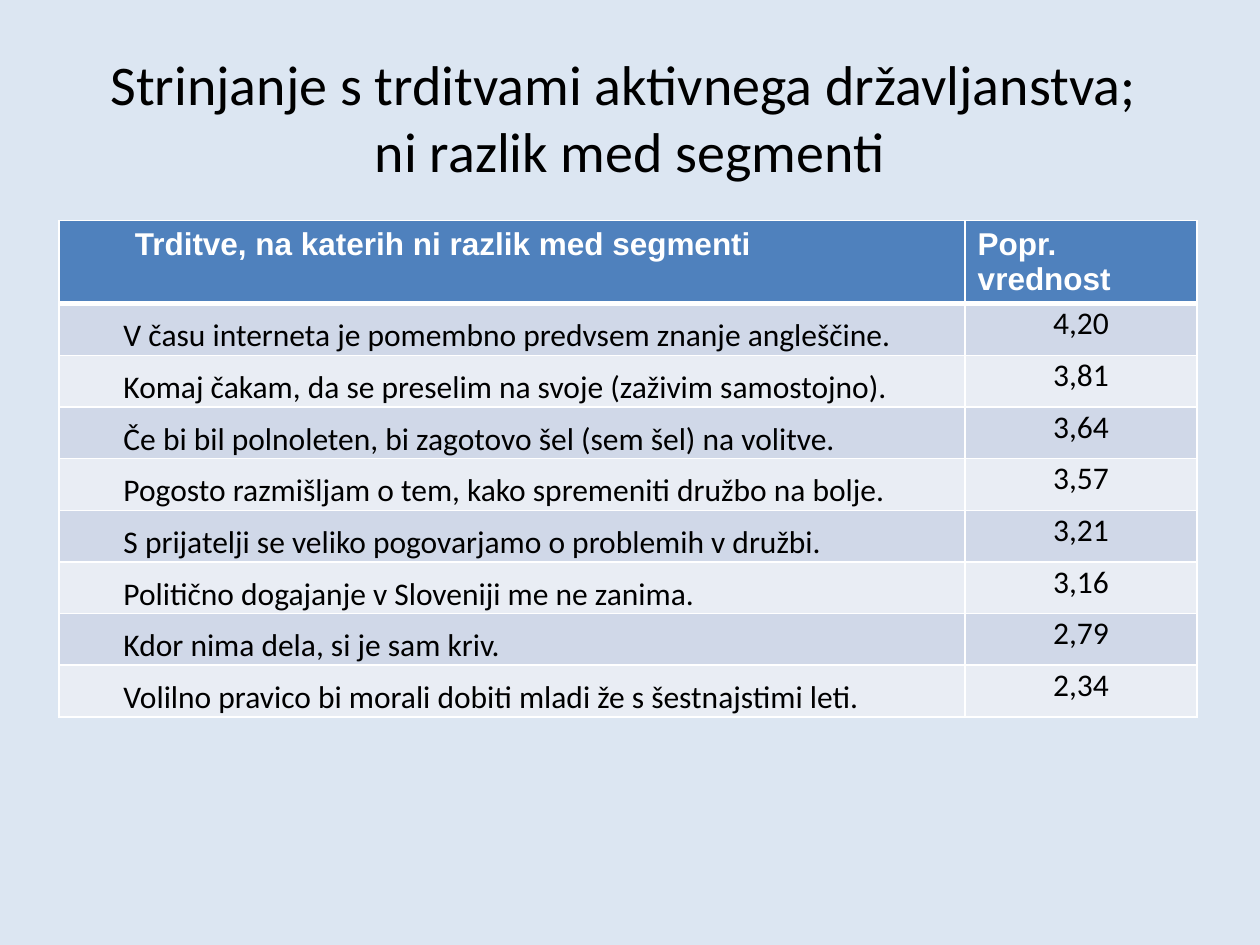
import lxml.etree
import pptx
import pptx.dml.color
import pptx.enum.text
import pptx.oxml.ns
import pptx.util

Inches = pptx.util.Inches
Pt = pptx.util.Pt
ALIGN = pptx.enum.text.PP_ALIGN
ANCHOR = pptx.enum.text.MSO_ANCHOR

COLORS = {
    "background": "DCE6F2",
    "text": "000000",
    "white": "FFFFFF",
    "header": "4F81BD",
    "odd": "D0D8E8",
    "even": "E9EDF4",
}

TITLE = "Strinjanje s trditvami aktivnega državljanstva; \vni razlik med segmenti"
HEADERS = ("Trditve, na katerih ni razlik med segmenti", "Popr. vrednost")
STATEMENTS = [
    ("V času interneta je pomembno predvsem znanje angleščine.", "4,20"),
    ("Komaj čakam, da se preselim na svoje (zaživim samostojno).", "3,81"),
    ("Če bi bil polnoleten, bi zagotovo šel (sem šel) na volitve.", "3,64"),
    ("Pogosto razmišljam o tem, kako spremeniti družbo na bolje.", "3,57"),
    ("S prijatelji se veliko pogovarjamo o problemih v družbi.", "3,21"),
    ("Politično dogajanje v Sloveniji me ne zanima.", "3,16"),
    ("Kdor nima dela, si je sam kriv.", "2,79"),
    ("Volilno pravico bi morali dobiti mladi že s šestnajstimi leti.", "2,34"),
]


def rgb(name):
    return pptx.dml.color.RGBColor.from_string(COLORS[name])


class SlideBuilder:
    """Holds the style and the current slide."""

    def __init__(self, deck):
        self.page = deck.slides.add_slide(deck.slide_layouts[5])
        fill = self.page.background.fill
        fill.solid()
        fill.fore_color.rgb = rgb("background")

    def format_runs(self, para, size, color, font="Calibri", bold=False):
        for span in para.runs:
            span.font.name = font
            span.font.size = Pt(size)
            span.font.bold = bold
            span.font.color.rgb = rgb(color)

    def title(self, text, left, top, width, height):
        box = self.page.shapes.title
        box.left, box.top = Inches(left), Inches(top)
        box.width, box.height = Inches(width), Inches(height)
        frame = box.text_frame
        frame.text = text
        frame.vertical_anchor = ANCHOR.MIDDLE
        para = frame.paragraphs[0]
        para.alignment = ALIGN.CENTER
        self.format_runs(para, 32, "text")

    def borders(self, cell, bottom):
        """Draw white cell borders, 1 pt except for the bottom one."""
        properties = cell._tc.get_or_add_tcPr()
        qn = pptx.oxml.ns.qn
        for side, width in (("L", 1), ("R", 1), ("T", 1), ("B", bottom)):
            line = lxml.etree.SubElement(properties, qn(f"a:ln{side}"), w=str(Pt(width)))
            solid = lxml.etree.SubElement(line, qn("a:solidFill"))
            lxml.etree.SubElement(solid, qn("a:srgbClr"), val=COLORS["white"])

    def cell(self, cell, text, fill, is_header, is_statement):
        self.borders(cell, 3 if is_header else 1)
        cell.fill.solid()
        cell.fill.fore_color.rgb = rgb(fill)
        cell.text_frame.text = text
        para = cell.text_frame.paragraphs[0]
        if is_statement:
            para.level = 1
            indent = para._p.get_or_add_pPr()
            indent.set("marL", str(Inches(0.5)))
            indent.set("indent", "0")
        if is_header:
            self.format_runs(para, 18, "white", "Arial", True)
            return
        cell.margin_left = cell.margin_right = cell.margin_top = Inches(0.01)
        cell.margin_bottom = 0
        if is_statement:
            cell.vertical_anchor = ANCHOR.BOTTOM
        else:
            para.alignment = ALIGN.CENTER
        self.format_runs(para, 18, "text")

    def table(self, rows, left, top, column_widths, row_height):
        table = self.page.shapes.add_table(
            len(rows), len(column_widths), Inches(left), Inches(top),
            Inches(sum(column_widths)), Inches(row_height * len(rows)),
        ).table
        for column, width in zip(table.columns, column_widths):
            column.width = Inches(width)
        for r, values in enumerate(rows):
            table.rows[r].height = Inches(row_height)
            fill = "header" if r == 0 else "odd" if r % 2 else "even"
            for c, text in enumerate(values):
                self.cell(table.cell(r, c), text, fill, r == 0, c == 0)


def main():
    deck = pptx.Presentation()
    deck.slide_width, deck.slide_height = Inches(10), Inches(7.5)
    builder = SlideBuilder(deck)
    builder.title(TITLE, 0.5, 0.3, 9, 1.25)
    builder.table([HEADERS] + STATEMENTS, 0.47, 1.75, (7.19, 1.84), 0.41)
    deck.save("out.pptx")


if __name__ == "__main__":
    main()
